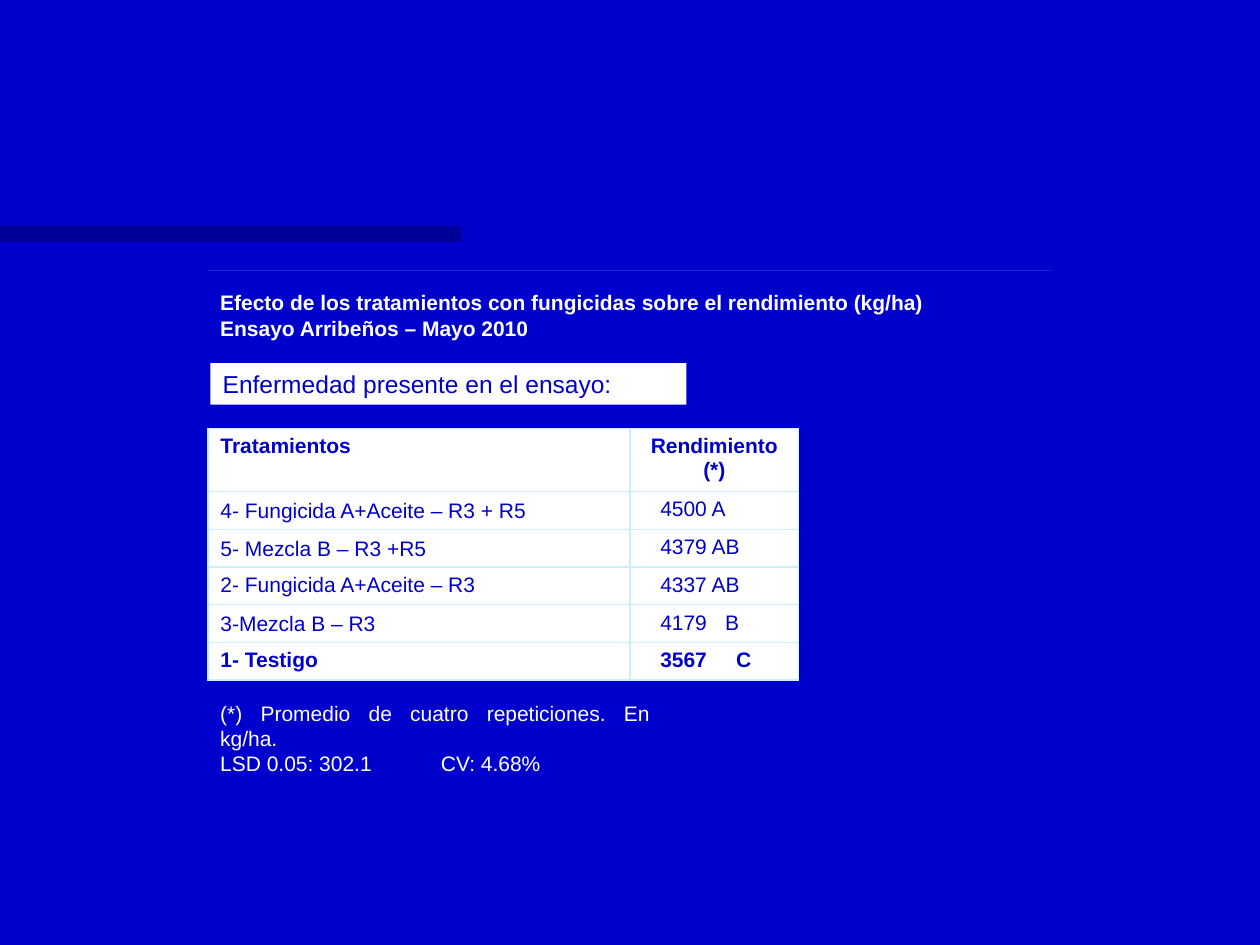
import dataclasses
import typing

import lxml.etree
import pptx
import pptx.dml.color
import pptx.enum.shapes
import pptx.enum.text
import pptx.oxml.ns
import pptx.util

Cm = pptx.util.Cm
Rgb = pptx.dml.color.RGBColor
Align = pptx.enum.text.PP_ALIGN
Anchor = pptx.enum.text.MSO_ANCHOR
qn = pptx.oxml.ns.qn


@dataclasses.dataclass(frozen=True)
class Theme:
    font: str = "Arial"
    body: int = 12
    label: int = 14
    blue: str = "0000CC"
    navy: str = "000066"
    white: str = "FFFFFF"
    rule: str = "CCECFF"


class Box(typing.NamedTuple):
    left: float
    top: float
    width: float
    height: float


class Row(typing.NamedTuple):
    name: str
    result: str
    bold: bool = False
    anchor: typing.Any = Anchor.TOP
    tab: float = 0


THEME = Theme()
LEFT = 4.19
COLS = (8.51, 3.4)
HEAD = 1.27
STEP = 0.76
INDENT = 0.61

ROWS = (
    Row("4- Fungicida A+Aceite – R3 + R5", "4500 A", anchor=Anchor.BOTTOM),
    Row("5- Mezcla B – R3 +R5", "4379 AB", anchor=Anchor.BOTTOM),
    Row("2- Fungicida A+Aceite – R3", "4337 AB"),
    Row("3-Mezcla B – R3", "4179\tB", anchor=Anchor.BOTTOM, tab=1.31),
    Row("1- Testigo", "3567\tC", bold=True, tab=1.53),
)


def add_tab(para, pos: float) -> None:
    tabs = lxml.etree.SubElement(para._p.get_or_add_pPr(), qn("a:tabLst"))
    lxml.etree.SubElement(tabs, qn("a:tab"), pos=str(Cm(pos)), algn="l")


def write(frame, text: str, color: str, size: int = THEME.body,
          bold: bool = False, align=Align.LEFT, tab: float = 0) -> None:
    frame.word_wrap = True
    frame.text = text
    for para in frame.paragraphs:
        para.alignment = align
        if tab:
            add_tab(para, tab)
        for run in para.runs:
            font = run.font
            font.name, font.size, font.bold = THEME.font, pptx.util.Pt(size), bold
            font.color.rgb = Rgb.from_string(color)


def add_rect(slide, box: Box, color: str):
    shape = slide.shapes.add_shape(
        pptx.enum.shapes.MSO_SHAPE.RECTANGLE, *map(Cm, box))
    shape.shadow.inherit = False
    shape.fill.solid()
    shape.fill.fore_color.rgb = Rgb.from_string(color)
    shape.line.fill.background()
    return shape


def fade(shape, share: int) -> None:
    """Set the opacity of a solid fill, in percent."""
    tint = shape.fill._xPr.find(qn("a:solidFill"))[0]
    lxml.etree.SubElement(tint, qn("a:alpha"), val=str(share * 1000))


def set_cell(cell, text: str, anchor=Anchor.TOP, **style) -> None:
    write(cell.text_frame, text, THEME.blue, **style)
    cell.vertical_anchor = anchor
    props = cell._tc.get_or_add_tcPr()
    for side in ("lnL", "lnR", "lnT", "lnB"):
        line = lxml.etree.SubElement(props, qn(f"a:{side}"), w=str(pptx.util.Pt(1)))
        fill = lxml.etree.SubElement(line, qn("a:solidFill"))
        lxml.etree.SubElement(fill, qn("a:srgbClr"), val=THEME.rule)
    cell.fill.solid()
    cell.fill.fore_color.rgb = Rgb.from_string(THEME.white)


def add_yields(slide) -> None:
    box = Box(LEFT, 8.64, sum(COLS), HEAD + STEP * len(ROWS))
    table = slide.shapes.add_table(len(ROWS) + 1, len(COLS), *map(Cm, box)).table
    for col, width in zip(table.columns, COLS):
        col.width = Cm(width)
    for num, row in enumerate(table.rows):
        row.height = Cm(STEP if num else HEAD)
    set_cell(table.cell(0, 0), "Tratamientos", bold=True, align=Align.JUSTIFY)
    set_cell(table.cell(0, 1), "Rendimiento (*)", bold=True, align=Align.CENTER)
    for num, row in enumerate(ROWS, 1):
        set_cell(table.cell(num, 0), row.name, row.anchor,
                 bold=row.bold, align=Align.JUSTIFY)
        cell = table.cell(num, 1)
        cell.margin_left = Cm(INDENT)
        set_cell(cell, row.result, bold=row.bold, align=Align.JUSTIFY, tab=row.tab)


def main() -> None:
    deck = pptx.Presentation()
    deck.slide_width, deck.slide_height = Cm(25.4), Cm(19.05)
    slide = deck.slides.add_slide(deck.slide_layouts[6])
    slide.background.fill.solid()
    slide.background.fill.fore_color.rgb = Rgb.from_string(THEME.blue)

    fade(add_rect(slide, Box(0, 4.55, 9.3, 0.33), THEME.navy), 50)

    title = add_rect(slide, Box(LEFT, 5.72, 14.71, 1.27), THEME.blue).text_frame
    title.vertical_anchor = Anchor.MIDDLE
    write(title, "Efecto de los tratamientos con fungicidas sobre el rendimiento "
          "(kg/ha)\nEnsayo Arribeños – Mayo 2010", THEME.white, bold=True)
    add_rect(slide, Box(LEFT, 5.46, 17.02, 0), THEME.white)

    add_yields(slide)

    note = slide.shapes.add_textbox(*map(Cm, Box(LEFT, 14.25, 9.17, 1.27))).text_frame
    note.vertical_anchor = Anchor.MIDDLE
    write(note, "(*) Promedio de cuatro repeticiones. En kg/ha.\n"
          "LSD 0.05: 302.1\tCV: 4.68%", THEME.white, align=Align.JUSTIFY, tab=4.45)

    label = add_rect(slide, Box(4.24, 7.32, 9.6, 0.84), THEME.white).text_frame
    label.vertical_anchor = Anchor.TOP
    write(label, "Enfermedad presente en el ensayo:", THEME.blue, THEME.label)

    deck.save("out.pptx")


if __name__ == "__main__":
    main()
